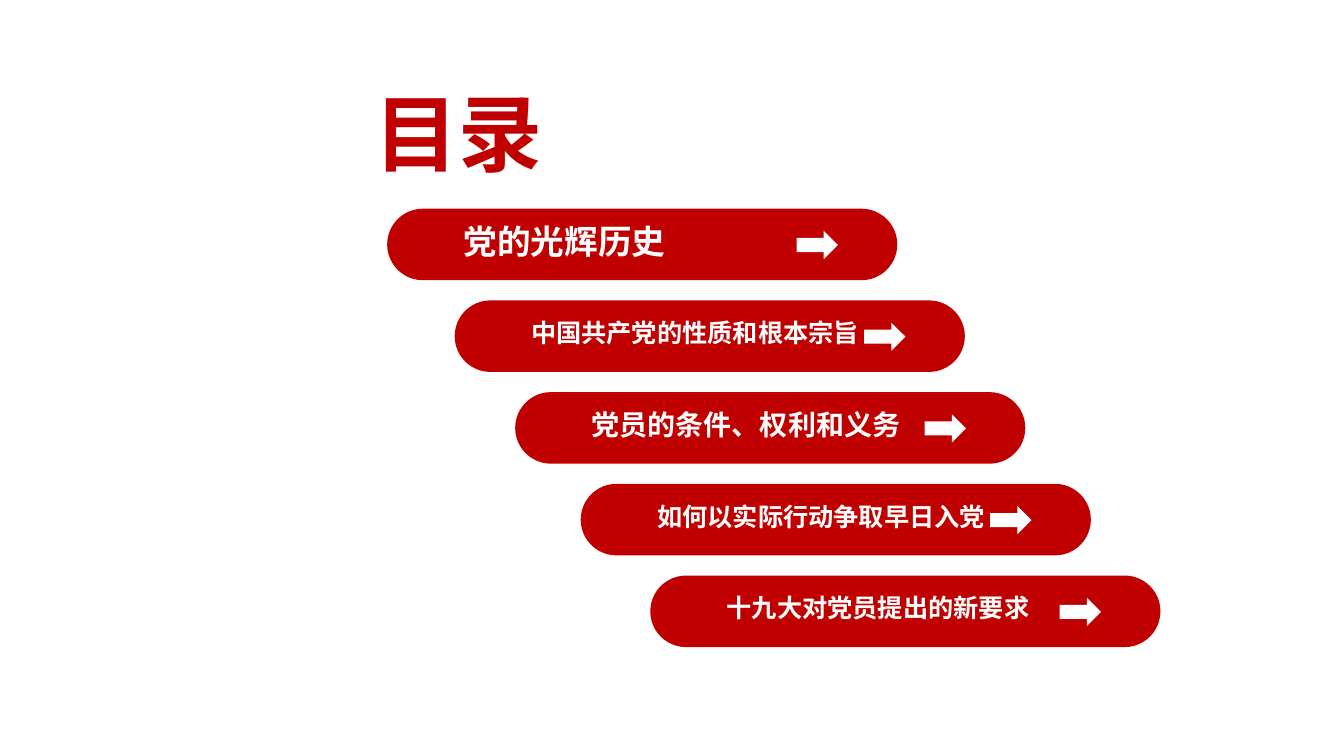
from lxml import etree
from pptx import Presentation
from pptx import util as u
from pptx.dml.color import RGBColor
from pptx.enum import shapes, text
from pptx.oxml import ns

RED = RGBColor(0xC0, 0x00, 0x00)
WHITE = RGBColor(0xFF, 0xFF, 0xFF)
FONT = "Noto Sans CJK SC"

TOPICS = [
    (3.84, "党的光辉历史", 24),
    (4.51, "中国共产党的性质和根本宗旨", 18),
    (5.11, "党员的条件、权利和义务", 20),
    (5.76, "如何以实际行动争取早日入党", 18),
    (6.45, "十九大对党员提出的新要求", 18),
]
FIRST_TOP = 2.07
ROW_STEP = 0.91


class ContentsPage:
    def __init__(self, deck):
        self.page = deck.slides.add_slide(deck.slide_layouts[6])

    def label(self, parent, wording, left, top, width, height, size, color, anchor):
        box = parent.add_textbox(*map(u.Inches, (left, top, width, height)))
        frame = box.text_frame
        frame.word_wrap = True
        frame.vertical_anchor = anchor
        span = frame.paragraphs[0].add_run()
        span.text = wording
        span.font.size = u.Pt(size)
        span.font.bold = True
        span.font.color.rgb = color
        span.font.name = FONT
        properties = span.font._element
        etree.SubElement(properties, ns.qn("a:ea"), typeface=FONT)
        return box

    def solid(self, parent, kind, left, top, width, height, color):
        shape = parent.add_shape(kind, *map(u.Inches, (left, top, width, height)))
        shape.shadow.inherit = False
        shape.fill.solid()
        shape.fill.fore_color.rgb = color
        shape.line.fill.background()
        return shape

    def title(self, wording):
        box = self.label(self.page.shapes, wording, 3.62, 0.76, 2.75, 1.11, 60, RED,
                         text.MSO_ANCHOR.TOP)
        box.text_frame.auto_size = text.MSO_AUTO_SIZE.SHAPE_TO_FIT_TEXT

    def topic(self, wording, left, top, size):
        group = self.page.shapes.add_group_shape().shapes
        pill = self.solid(group, shapes.MSO_SHAPE.ROUNDED_RECTANGLE,
                          left, top, 5.06, 0.71, RED)
        pill.adjustments[0] = 0.5
        self.label(group, wording, left + 0.66, top - 0.03, 3.64, 0.7, size, WHITE,
                   text.MSO_ANCHOR.MIDDLE)
        self.solid(group, shapes.MSO_SHAPE.RIGHT_ARROW,
                   left + 4.06, top + 0.22, 0.41, 0.28, WHITE)


def main():
    deck = Presentation()
    deck.slide_width = u.Inches(13.33)
    deck.slide_height = u.Inches(7.5)
    contents = ContentsPage(deck)
    contents.title("目录")
    for row, (left, wording, size) in enumerate(TOPICS):
        contents.topic(wording, left, FIRST_TOP + row * ROW_STEP, size)
    deck.save("out.pptx")


if __name__ == "__main__":
    main()
